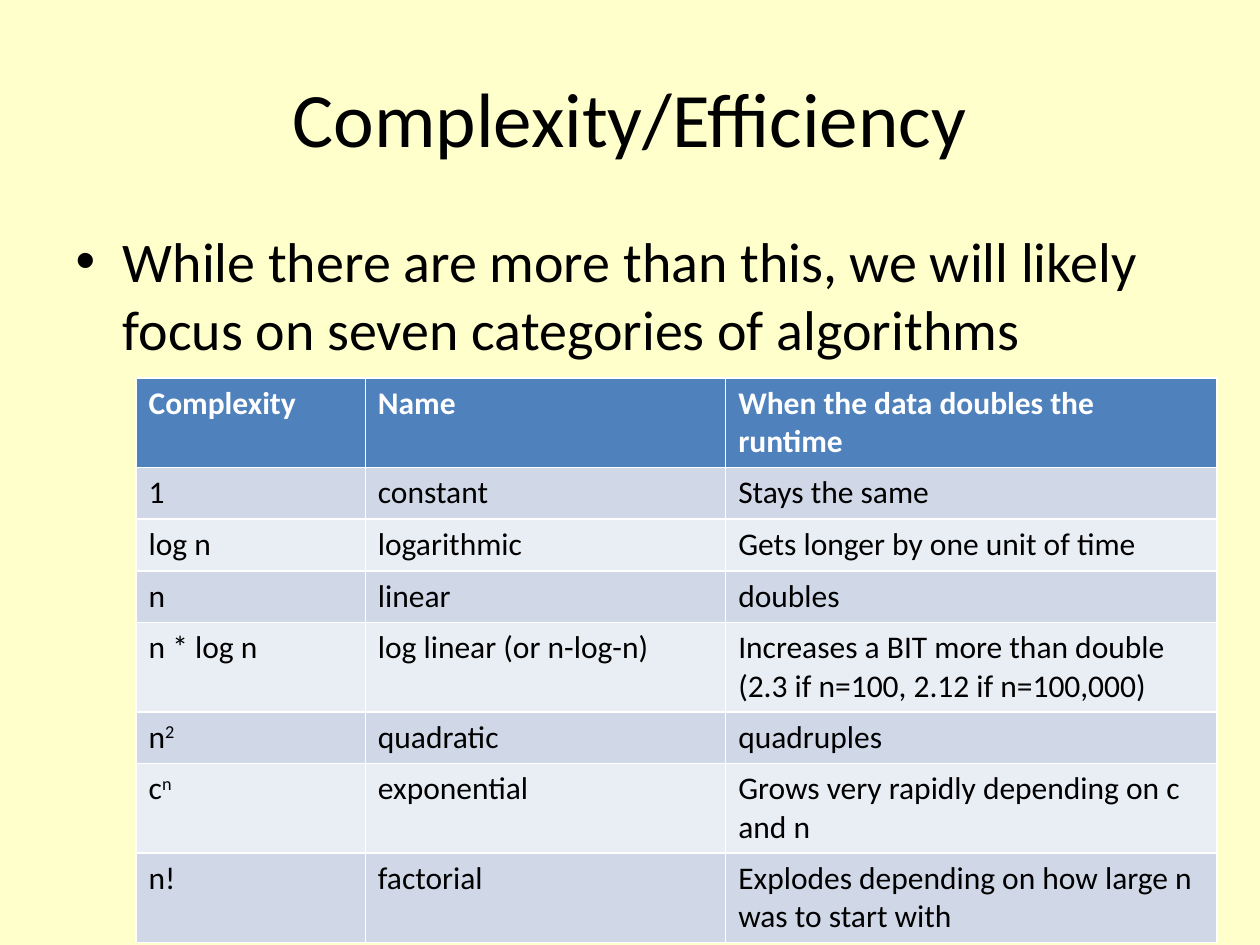
from dataclasses import dataclass

from pptx import Presentation
from pptx.dml.color import RGBColor
from pptx.enum.text import MSO_ANCHOR, PP_ALIGN
from pptx.util import Inches, Pt

TITLE_AND_CONTENT = 1
CENTER, LEFT = PP_ALIGN.CENTER, PP_ALIGN.LEFT
MIDDLE, TOP = MSO_ANCHOR.MIDDLE, MSO_ANCHOR.TOP


@dataclass(frozen=True)
class Theme:
    font: str = "Calibri"
    background: str = "FFFFCC"
    text: str = "000000"
    header_text: str = "FFFFFF"
    header_fill: str = "4F81BD"
    bands: tuple = ("D0D8E8", "E9EDF4")
    title_size: int = 44
    body_size: int = 32
    table_size: int = 18


THEME = Theme()
COLUMN_WIDTHS = (1.82, 2.86, 3.9)
ROW_HEIGHT = 0.41
# "^" starts a superscript, a line break starts a paragraph
ROWS = [
    ("Complexity", "Name", "When the data doubles the runtime"),
    ("1", "constant", "Stays the same"),
    ("log n", "logarithmic", "Gets longer by one unit of time"),
    ("n", "linear", "doubles"),
    ("n * log n", "log linear (or n-log-n)",
     "Increases a BIT more than double\n(2.3 if n=100, 2.12 if n=100,000)"),
    ("n^2", "quadratic", "quadruples"),
    ("c^n", "exponential", "Grows very rapidly depending on c and n"),
    ("n!", "factorial", "Explodes depending on how large n was to start with"),
]


def set_fill(fill, color):
    fill.solid()
    fill.fore_color.rgb = RGBColor.from_string(color)


def add_run(p, text, size, color, bold=False, superscript=False):
    r = p.add_run()
    r.text = text
    formats = {"name": THEME.font, "size": Pt(size), "bold": bold}
    for name, value in formats.items():
        setattr(r.font, name, value)
    r.font.color.rgb = RGBColor.from_string(color)
    if superscript:
        r._r.get_or_add_rPr().set("baseline", "30000")


def fill_placeholder(sp, box, text, size, align, anchor):
    for name, value in zip(("left", "top", "width", "height"), box):
        setattr(sp, name, Inches(value))
    tf = sp.text_frame
    tf.word_wrap = True
    tf.vertical_anchor = anchor
    p = tf.paragraphs[0]
    p.alignment = align
    add_run(p, text, size, THEME.text)


def fill_cell(cell, text, fill, color, bold):
    set_fill(cell.fill, fill)
    tf = cell.text_frame
    for i, line in enumerate(text.split("\n")):
        p = tf.add_paragraph() if i else tf.paragraphs[0]
        for j, part in enumerate(line.split("^")):
            add_run(p, part, THEME.table_size, color, bold, superscript=j > 0)


def add_complexity_table(s, left, top):
    frame = s.shapes.add_table(
        len(ROWS), len(COLUMN_WIDTHS), Inches(left), Inches(top),
        Inches(sum(COLUMN_WIDTHS)), Inches(ROW_HEIGHT * len(ROWS)))
    table = frame.table
    for column, width in zip(table.columns, COLUMN_WIDTHS):
        column.width = Inches(width)
    for i, texts in enumerate(ROWS):
        table.rows[i].height = Inches(ROW_HEIGHT)
        header = i == 0
        fill = THEME.header_fill if header else THEME.bands[(i - 1) % 2]
        color = THEME.header_text if header else THEME.text
        for j, text in enumerate(texts):
            fill_cell(table.cell(i, j), text, fill, color, header)


def add_complexity_slide(prs):
    s = prs.slides.add_slide(prs.slide_layouts[TITLE_AND_CONTENT])
    set_fill(s.background.fill, THEME.background)
    fill_placeholder(s.shapes.title, (0.5, 0.3, 9, 1.25),
                     "Complexity/Efficiency", THEME.title_size, CENTER, MIDDLE)
    fill_placeholder(
        s.placeholders[1], (0.5, 1.75, 9, 4.95),
        "While there are more than this, we will likely focus on "
        "seven categories of algorithms", THEME.body_size, LEFT, TOP)
    add_complexity_table(s, 1.08, 3)


def main():
    prs = Presentation()
    prs.slide_width, prs.slide_height = Inches(10), Inches(7.5)
    add_complexity_slide(prs)
    prs.save("out.pptx")


if __name__ == "__main__":
    main()
